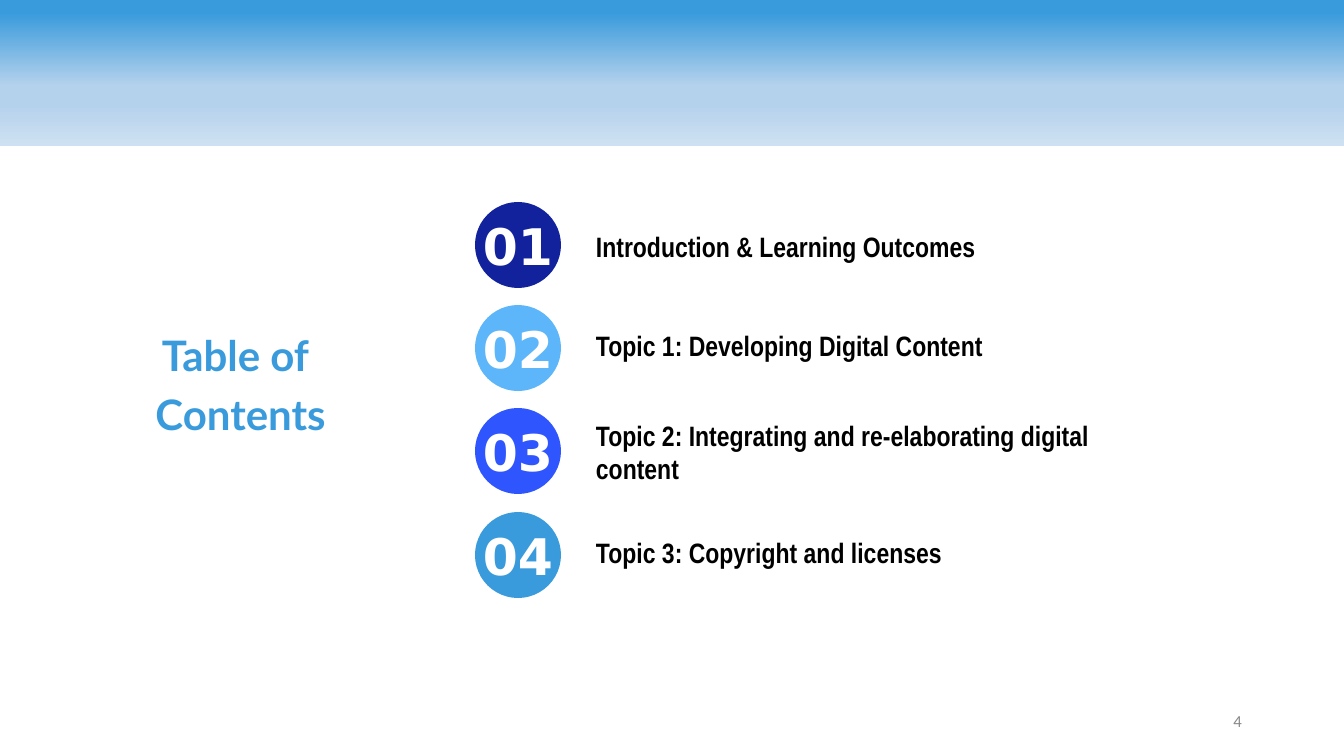
from lxml import etree
from pptx import Presentation
from pptx import util as u
from pptx.dml.color import RGBColor
from pptx.enum import shapes, text
from pptx.oxml import ns

PX = 914400 / 100.8
SKY = RGBColor(0x3A, 0x9B, 0xDC)
NAVY = RGBColor(0x12, 0x22, 0x9D)
LIGHT = RGBColor(0x5C, 0xB6, 0xF9)
ROYAL = RGBColor(0x2F, 0x55, 0xFE)
MIST = RGBColor(0xB5, 0xD2, 0xEC)
PALE = RGBColor(0xCE, 0xE1, 0xF2)
GREY = RGBColor(0x88, 0x88, 0x88)
BLACK = RGBColor(0, 0, 0)
WHITE = RGBColor(0xFF, 0xFF, 0xFF)


def px(*values):
    return [u.Emu(round(v * PX)) for v in values]


def write(sp, content, font, size, color, bold, align, side, wrap=True):
    tf = sp.text_frame
    tf.word_wrap = wrap
    tf.margin_left, tf.margin_top, tf.margin_right, tf.margin_bottom = px(side, 5, side, 5)
    tf.text = content
    for p in tf.paragraphs:
        p.alignment = align
        f = p.runs[0].font
        f.name, f.size, f.bold = font, u.Pt(size), bold
        f.color.rgb = color
    return tf


prs = Presentation()
prs.slide_width, prs.slide_height = px(1344, 756)
s = prs.slides.add_slide(prs.slide_layouts[5])

band = s.shapes.add_shape(shapes.MSO_SHAPE.RECTANGLE, *px(0, 0, 1344, 146))
band.shadow.inherit = False
band.line.fill.background()
band.fill.gradient()
grad = band.fill._xPr.find(ns.qn("a:gradFill"))
for child in list(grad):
    grad.remove(child)
stops = etree.SubElement(grad, ns.qn("a:gsLst"))
for percent, color in [(9, SKY), (59, MIST), (72, MIST), (100, PALE)]:
    stop = etree.SubElement(stops, ns.qn("a:gs"), pos=str(percent * 1000))
    etree.SubElement(stop, ns.qn("a:srgbClr"), val=str(color))
etree.SubElement(grad, ns.qn("a:lin"), ang="5400000", scaled="0")

title = s.shapes.title
title.left, title.top, title.width, title.height = px(57, 330, 351, 132)
tf = write(title, "Table of\n Contents", "Lato", 30, SKY, True, text.PP_ALIGN.CENTER, 10)
tf.auto_size = text.MSO_AUTO_SIZE.NONE
tf.vertical_anchor = text.MSO_ANCHOR.TOP
margin, indent = px(50, -44)
for i, p in enumerate(tf.paragraphs):
    p.line_spacing = 0.9
    p.space_before = u.Pt(10 * i)
    pPr = p._p.get_or_add_pPr()
    pPr.set("marL", str(margin))
    pPr.set("indent", str(indent))

topics = [
    ("Introduction & Learning Outcomes", NAVY, 224, 44),
    ("Topic 1: Developing Digital Content", LIGHT, 323, 44),
    ("Topic 2: Integrating and re-elaborating digital content", ROYAL, 413, 78),
    ("Topic 3: Copyright and licenses", SKY, 530, 44),
]
for i, (topic, color, label_top, label_height) in enumerate(topics):
    row = s.shapes.add_group_shape()
    label = row.shapes.add_textbox(*px(584, label_top, 564, label_height))
    write(label, topic, "Arial Narrow", 20, BLACK, True, text.PP_ALIGN.LEFT, 12)
    circle = row.shapes.add_shape(shapes.MSO_SHAPE.OVAL, *px(475, 202 + i * 310 // 3, 86, 86))
    circle.shadow.inherit = False
    circle.fill.solid()
    circle.fill.fore_color.rgb = color
    circle.line.fill.background()
    tf = write(circle, f"{i + 1:02d}", "DejaVu Sans", 36, WHITE, True,
               text.PP_ALIGN.CENTER, 0, wrap=False)
    tf.vertical_anchor = text.MSO_ANCHOR.MIDDLE

number = s.shapes.add_textbox(*px(950, 701, 302, 40))
tf = write(number, "4", "Calibri", 12, GREY, False, text.PP_ALIGN.RIGHT, 10)
tf.vertical_anchor = text.MSO_ANCHOR.MIDDLE

prs.save("out.pptx")
